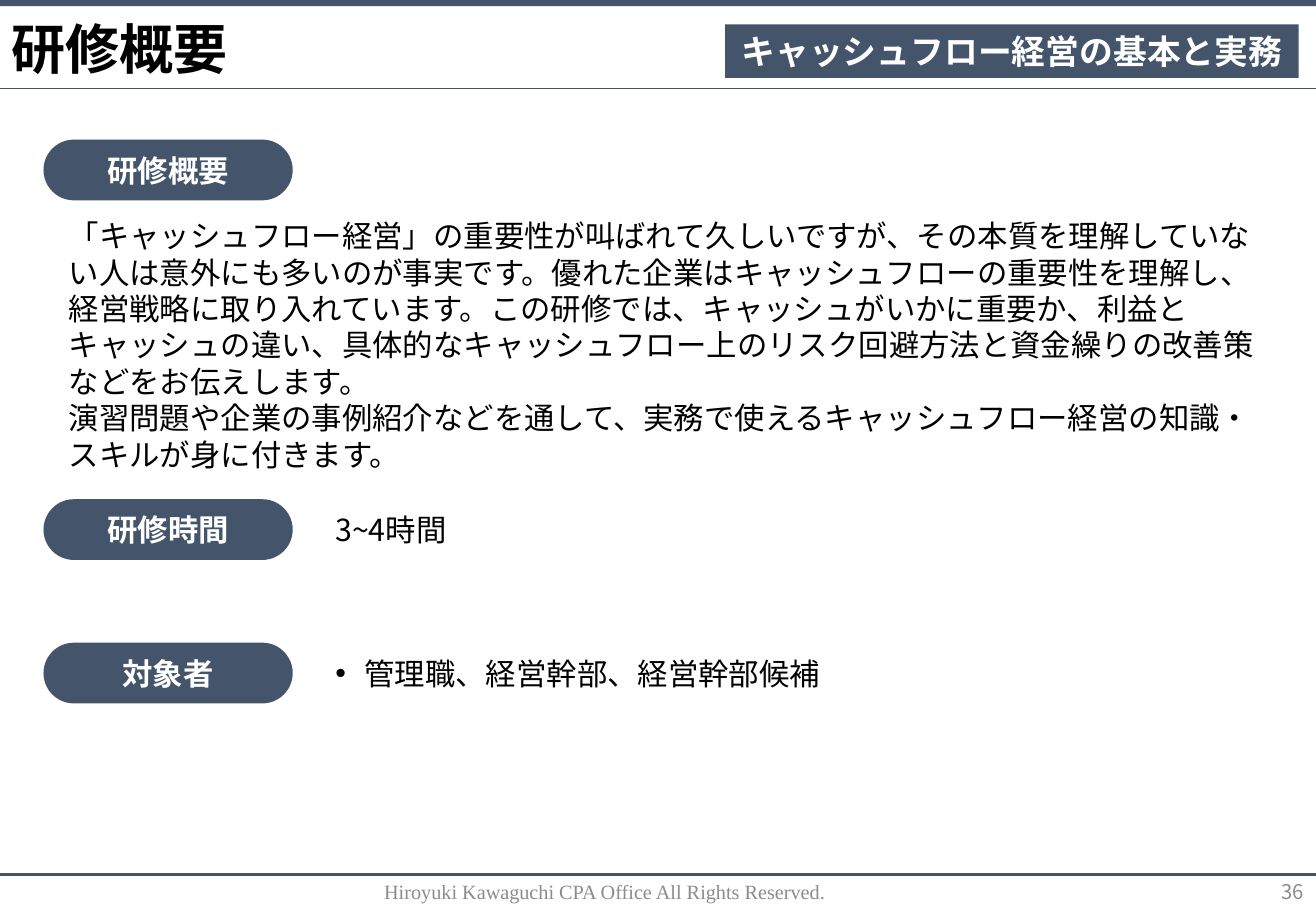
"""Build the training overview slide."""
import pptx
import pptx.util
import pptx.dml.color
import pptx.enum.lang
import pptx.enum.shapes
import pptx.enum.text
import pptx.oxml.ns
import lxml.etree

Cm = pptx.util.Cm
Pt = pptx.util.Pt
Align = pptx.enum.text.PP_ALIGN
Anchor = pptx.enum.text.MSO_ANCHOR
Shape = pptx.enum.shapes.MSO_SHAPE
qn = pptx.oxml.ns.qn

WIDE, HIGH = 27.51, 19.05


def color(code):
    """Turn a hex string into a colour."""
    return pptx.dml.color.RGBColor.from_string(code)


class Deck:
    """Hold the style and the current slide."""

    font = "Noto Sans CJK JP"
    navy, white, black, gray = "44546A", "FFFFFF", "000000", "8C8C8C"

    def __init__(self):
        """Open a blank slide."""
        self.file = pptx.Presentation()
        self.file.slide_width, self.file.slide_height = Cm(WIDE), Cm(HIGH)
        self.slide = self.file.slides.add_slide(self.file.slide_layouts[6])

    def label(self, shape, lines, size, ink, bold=False, align=Align.LEFT,
              anchor=Anchor.TOP, font=None, bullet=False):
        """Put styled lines into a shape."""
        frame = shape.text_frame
        frame.text = "\n".join(lines)
        frame.word_wrap = True
        frame.vertical_anchor = anchor
        for para in frame.paragraphs:
            para.alignment = align
            if bullet:
                props = para._p.get_or_add_pPr()
                props.set("marL", str(Cm(0.61)))
                props.set("indent", str(-Cm(0.61)))
                face = lxml.etree.SubElement(props, qn("a:buFont"))
                face.set("typeface", "Arial")
                mark = lxml.etree.SubElement(props, qn("a:buChar"))
                mark.set("char", "•")
            for run in para.runs:
                run.font.size = Pt(size)
                run.font.bold = bold
                run.font.name = font or self.font
                run.font.color.rgb = color(ink)
                run.font.language_id = pptx.enum.lang.MSO_LANGUAGE_ID.JAPANESE
                east = lxml.etree.Element(qn("a:ea"))
                east.set("typeface", self.font)
                run._r.rPr.find(qn("a:latin")).addnext(east)

    def text(self, x, y, w, h, lines, size=18, ink=black, **style):
        """Add a text box."""
        box = self.slide.shapes.add_textbox(Cm(x), Cm(y), Cm(w), Cm(h))
        self.label(box, lines, size, ink, **style)

    def block(self, x, y, w, h, words=None, size=18, kind=Shape.RECTANGLE):
        """Add a navy shape with optional words."""
        shape = self.slide.shapes.add_shape(kind, Cm(x), Cm(y), Cm(w), Cm(h))
        shape.shadow.inherit = False
        shape.fill.solid()
        shape.fill.fore_color.rgb = color(self.navy)
        shape.line.fill.background()
        if kind == Shape.ROUNDED_RECTANGLE:
            shape.adjustments[0] = 0.5
        if words:
            self.label(shape, [words], size, self.white, bold=True,
                       align=Align.CENTER, anchor=Anchor.MIDDLE)

    def pill(self, y, words):
        """Add a section heading."""
        self.block(0.91, y, 5.21, 1.27, words, kind=Shape.ROUNDED_RECTANGLE)

    def rule(self, y, width):
        """Add a line across the slide."""
        line = self.slide.shapes.add_connector(
            pptx.enum.shapes.MSO_CONNECTOR.STRAIGHT,
            Cm(0), Cm(y), Cm(WIDE), Cm(y))
        line.line.color.rgb = color(self.navy)
        line.line.width = Pt(width)
        lxml.etree.SubElement(line._element.spPr, qn("a:effectLst"))


def main():
    """Draw the slide and save it."""
    deck = Deck()
    deck.rule(1.85, 0.25)
    deck.block(0, 0, WIDE, 0.13)
    deck.rule(18.29, 1.5)

    deck.pill(2.92, "研修概要")
    deck.text(1.19, 4.42, 25.4, 4.88, [
        "「キャッシュフロー経営」の重要性が叫ばれて久しいですが、"
        "その本質を理解していない人は意外にも多いのが事実です。"
        "優れた企業はキャッシュフローの重要性を理解し、"
        "経営戦略に取り入れています。この研修では、"
        "キャッシュがいかに重要か、利益とキャッシュの違い、"
        "具体的なキャッシュフロー上のリスク回避方法と"
        "資金繰りの改善策などをお伝えします。",
        "演習問題や企業の事例紹介などを通して、"
        "実務で使えるキャッシュフロー経営の知識・スキルが身に付きます。",
    ])
    for y, head, note, bullet in (
            (10.44, "研修時間", "3~4時間", False),
            (13.44, "対象者", "管理職、経営幹部、経営幹部候補", True)):
        deck.pill(y, head)
        deck.text(6.76, y + 0.13, 14.38, 1.02, [note], bullet=bullet)

    foot = dict(size=12, ink=deck.gray, anchor=Anchor.MIDDLE)
    deck.text(6.3, 18.14, 12.8, 1.02,
              ["Hiroyuki Kawaguchi CPA Office All Rights Reserved. "],
              align=Align.CENTER, font="Times New Roman", **foot)
    deck.text(21.59, 18.14, 5.92, 1.02, ["36"], align=Align.RIGHT, **foot)

    deck.text(0, 0.2, 5.08, 1.63, ["研修概要"], size=32, bold=True)
    deck.block(15.16, 0.51, 11.99, 1.12,
               "キャッシュフロー経営の基本と実務", size=20)
    deck.file.save("out.pptx")


if __name__ == "__main__":
    main()
